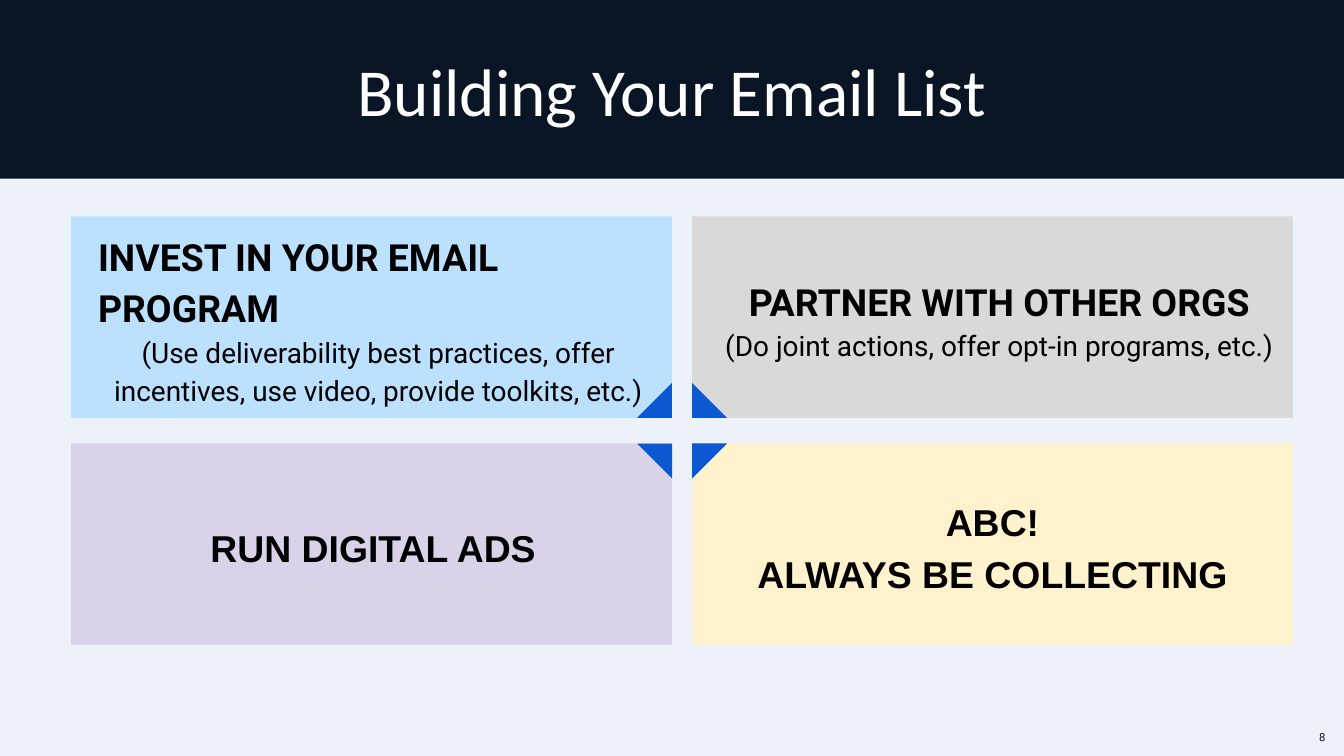
from pptx import Presentation
from pptx.dml.color import RGBColor
from pptx.enum.shapes import MSO_SHAPE
from pptx.enum.text import MSO_ANCHOR, PP_ALIGN
from pptx.util import Inches, Pt

RECT, TRIANGLE = MSO_SHAPE.RECTANGLE, MSO_SHAPE.RIGHT_TRIANGLE
LEFT, CENTER, RIGHT = PP_ALIGN.LEFT, PP_ALIGN.CENTER, PP_ALIGN.RIGHT
MIDDLE = MSO_ANCHOR.MIDDLE

NAVY = RGBColor(0x09, 0x14, 0x25)
PALE = RGBColor(0xED, 0xF2, 0xFA)
WHITE = RGBColor(0xFF, 0xFF, 0xFF)
BLACK = RGBColor(0x00, 0x00, 0x00)
ACCENT = RGBColor(0x0C, 0x58, 0xD3)
SKY = RGBColor(0xBB, 0xE1, 0xFF)
GRAY = RGBColor(0xD9, 0xD9, 0xD9)
LILAC = RGBColor(0xD9, 0xD2, 0xE9)
CREAM = RGBColor(0xFF, 0xF2, 0xCC)

# 16:9 slide and card grid, in inches
WIDTH = 10
HEIGHT = WIDTH * 9 / 16
GRID_LEFT, GRID_TOP = 0.53, 1.61
CARD_W, CARD_H = 4.47, 1.5
GAP_X, GAP_Y = 0.15, 0.19
CORNER = 0.26


def write(tf, text, first=False, size=20, font="Roboto", color=BLACK,
          bold=False, align=CENTER, spacing=None):
    """Add one formatted paragraph to a text frame."""
    p = tf.paragraphs[0] if first else tf.add_paragraph()
    p.alignment = align
    if spacing:
        p.line_spacing = spacing
    r = p.add_run()
    r.text = text
    r.font.size, r.font.name, r.font.bold = Pt(size), font, bold
    r.font.color.rgb = color


class Deck:
    def __init__(self):
        self.prs = Presentation()
        self.prs.slide_width = Inches(WIDTH)
        self.prs.slide_height = Inches(HEIGHT)
        self.s = self.prs.slides.add_slide(self.prs.slide_layouts[6])
        self.s.background.fill.solid()
        self.s.background.fill.fore_color.rgb = PALE

    def shape(self, kind, x, y, w, h, color):
        sp = self.s.shapes.add_shape(kind, *map(Inches, (x, y, w, h)))
        sp.shadow.inherit = False
        sp.fill.solid()
        sp.fill.fore_color.rgb = color
        sp.line.fill.background()
        return sp

    def frame(self, sp, left=0.1, right=0.1):
        tf = sp.text_frame
        tf.word_wrap = True
        tf.vertical_anchor = MIDDLE
        tf.margin_left, tf.margin_right = Inches(left), Inches(right)
        tf.margin_top = tf.margin_bottom = Inches(0.1)
        return tf

    def header(self, text):
        tf = self.frame(self.shape(RECT, 0, 0, WIDTH, 1.33, NAVY))
        write(tf, text, first=True, size=36, font="Calibri", color=WHITE)

    def card(self, col, row, color, lines, right=0.1):
        x = GRID_LEFT + col * (CARD_W + GAP_X)
        y = GRID_TOP + row * (CARD_H + GAP_Y)
        tf = self.frame(self.shape(RECT, x, y, CARD_W, CARD_H, color),
                        left=0.2, right=right)
        for i, (text, style) in enumerate(lines):
            write(tf, text, first=i == 0, spacing=1.15, **style)

    def corner(self, col, row, rotation):
        """Mark the card corner that points to the middle of the grid."""
        x = GRID_LEFT + CARD_W + (GAP_X if col else -CORNER)
        y = GRID_TOP + CARD_H + (GAP_Y if row else -CORNER)
        sp = self.shape(TRIANGLE, x, y, CORNER, CORNER, ACCENT)
        sp.rotation = rotation

    def page_number(self, number):
        w, h = 0.6, 0.43
        box = self.s.shapes.add_textbox(
            *map(Inches, (WIDTH - w - 0.04, 5.27, w, h)))
        write(self.frame(box), number, first=True, size=6, color=NAVY,
              align=RIGHT)


def main():
    deck = Deck()
    deck.header("Building Your Email List")

    # Cards
    head = {"bold": True}
    head_arial = {"bold": True, "font": "Arial"}
    detail = {"size": 15}
    deck.card(0, 0, SKY, [
        ("INVEST IN YOUR EMAIL PROGRAM", {**head, "align": LEFT}),
        ("(Use deliverability best practices, offer incentives, "
         "use video, provide toolkits, etc.)", detail)])
    deck.card(1, 0, GRAY, [
        ("PARTNER WITH OTHER ORGS", head),
        ("(Do joint actions, offer opt-in programs, etc.)", detail)])
    deck.card(0, 1, LILAC, [("RUN DIGITAL ADS ", head_arial)])
    deck.card(1, 1, CREAM, [
        ("ABC!", head_arial),
        ("ALWAYS BE COLLECTING", head_arial)], right=0.2)

    # Triangles around the centre
    for col, row, rotation in ((0, 0, 270), (1, 0, 0), (0, 1, 180), (1, 1, 90)):
        deck.corner(col, row, rotation)

    deck.page_number("8")
    deck.prs.save("out.pptx")


if __name__ == "__main__":
    main()
